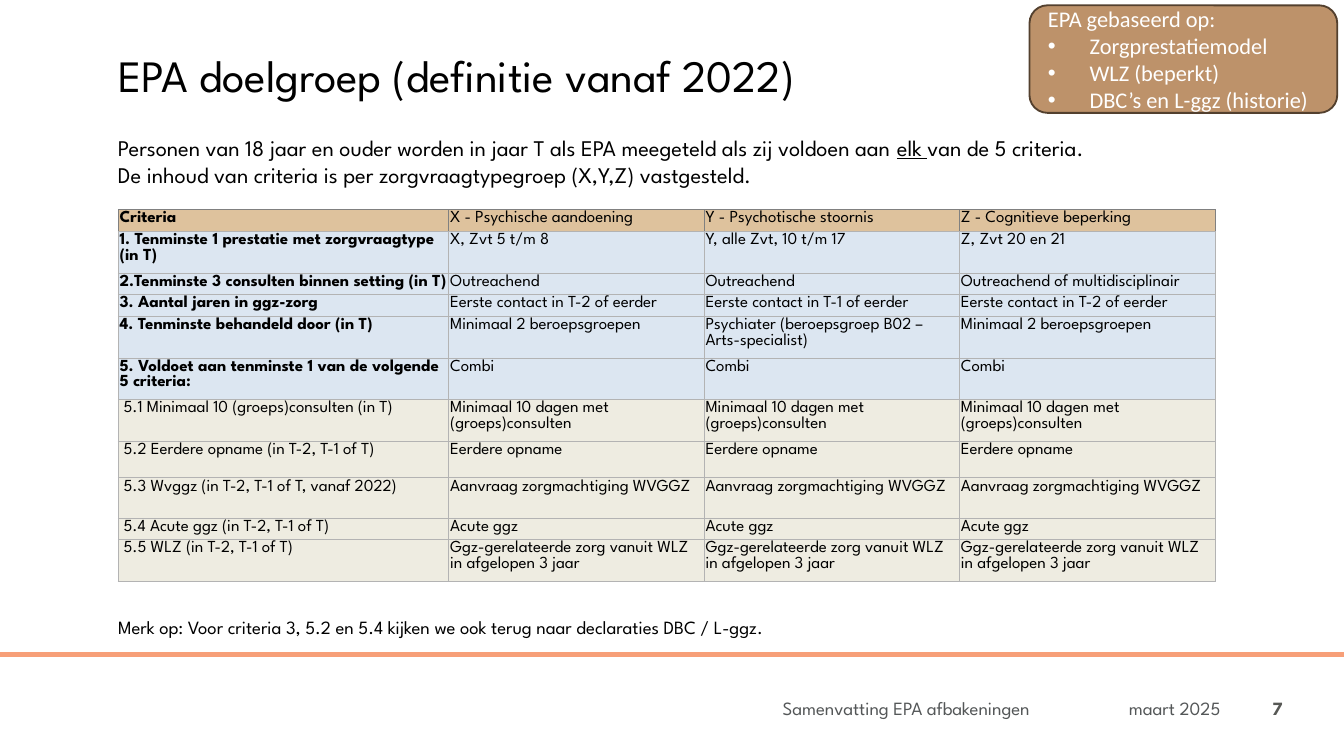
from lxml import etree
from pptx import Presentation, util as u
from pptx.dml.color import RGBColor
from pptx.enum import shapes, text
from pptx.oxml.ns import qn

FONT = "League Spartan"
HEX = {"black": "000000", "white": "FFFFFF", "grey": "545758", "page": "575855",
       "rule": "F79F78", "head": "DEC29D", "main": "DCE6F1", "sub": "EEECE1",
       "edge": "B3B3B3", "dark": "808080", "note": "BD926A", "rim": "53402E"}

# Content
TITLE = "EPA doelgroep (definitie vanaf 2022)"
INTRO = [["Personen van 18 jaar en ouder worden in jaar T als EPA meegeteld als zij voldoen aan ",
          "elk ", "van de 5 criteria."],
         ["De inhoud van criteria is per zorgvraagtypegroep (X,Y,Z) vastgesteld."]]
REMARK = "Merk op: Voor criteria 3, 5.2 en 5.4 kijken we ook terug naar declaraties DBC / L-ggz."
BASIS = ["EPA gebaseerd op:", "Zorgprestatiemodel", "WLZ (beperkt)", "DBC’s en L-ggz (historie)"]
FOOT = [("Samenvatting EPA afbakeningen", 3.72, 3.94, "grey"),
        ("maart 2025", 7.68, 1.4, "grey"), ("7", 9.06, 0.58, "page")]

# Row kind, least height, label, then X, Y and Z (a single value serves all three)
ROWS = [
    ("head", 0.14, "Criteria", "X - Psychische aandoening", "Y - Psychotische stoornis",
     "Z - Cognitieve beperking"),
    ("main", 0.14, "1. Tenminste 1 prestatie met zorgvraagtype (in T)", "X, Zvt 5 t/m 8",
     "Y, alle Zvt, 10 t/m 17", "Z, Zvt 20 en 21"),
    ("main", 0.14, "2.Tenminste 3 consulten binnen setting (in T)", "Outreachend",
     "Outreachend", "Outreachend of multidisciplinair"),
    ("main", 0.14, "3. Aantal jaren in ggz-zorg", "Eerste contact in T-2 of eerder",
     "Eerste contact in T-1 of eerder", "Eerste contact in T-2 of eerder"),
    ("main", 0.27, "4. Tenminste behandeld door (in T)", "Minimaal 2 beroepsgroepen",
     "Psychiater (beroepsgroep B02 – Arts-specialist)", "Minimaal 2 beroepsgroepen"),
    ("main", 0.27, "5. Voldoet aan tenminste 1 van de volgende 5 criteria:", "Combi"),
    ("sub", 0.27, "5.1 Minimaal 10 (groeps)consulten (in T)",
     "Minimaal 10 dagen met (groeps)consulten"),
    ("sub", 0.27, "5.2 Eerdere opname (in T-2, T-1 of T)", "Eerdere opname"),
    ("sub", 0.3, "5.3 Wvggz (in T-2, T-1 of T, vanaf 2022)", "Aanvraag zorgmachtiging WVGGZ"),
    ("sub", 0.14, "5.4 Acute ggz (in T-2, T-1 of T)", "Acute ggz"),
    ("sub", 0.27, "5.5 WLZ (in T-2, T-1 of T)",
     "Ggz-gerelateerde zorg vanuit WLZ in afgelopen 3 jaar"),
]
COLS = [2.46, 1.9, 1.9, 1.9]


def rgb(name):
    return RGBColor.from_string(HEX[name])


def box(x, y, w, h):
    return [u.Inches(v) for v in (x, y, w, h)]


def style(frame, size, color="black", face=FONT, bold=False):
    for para in frame.paragraphs:
        for run in para.runs:
            font = run.font
            font.size, font.name, font.bold = u.Pt(size), face, bold
            font.color.rgb = rgb(color)


def label(words, place):
    frame = slide.shapes.add_textbox(*box(*place)).text_frame
    frame.word_wrap = True
    frame.text = words
    return frame


def border(cell, kind):
    props = cell._tc.get_or_add_tcPr()
    for side in "LRTB":
        tone = "dark" if kind == "head" and side != "B" else "edge"
        line = etree.SubElement(props, qn(f"a:ln{side}"), w=str(u.Pt(0.5)))
        fill = etree.SubElement(line, qn("a:solidFill"))
        etree.SubElement(fill, qn("a:srgbClr"), val=HEX[tone])


# Widescreen page, 16 by 9
deck = Presentation()
deck.slide_width = u.Inches(10)
deck.slide_height = u.Inches(10 * 9 / 16)
slide = deck.slides.add_slide(deck.slide_layouts[5])

# Footer rule
rule = slide.shapes.add_connector(shapes.MSO_CONNECTOR.STRAIGHT, *box(0, 4.87, 10, 4.87))
rule.line.color.rgb = rgb("rule")
rule.line.width = u.Pt(2.75)
etree.SubElement(rule._element.spPr, qn("a:effectLst"))

# Title
title = slide.shapes.title
title.left, title.top, title.width, title.height = box(0.88, 0.4, 8.17, 0.57)
frame = title.text_frame
frame.text = TITLE
frame.margin_left = frame.margin_right = frame.margin_top = frame.margin_bottom = 0
frame.vertical_anchor = text.MSO_ANCHOR.TOP
frame.auto_size = text.MSO_AUTO_SIZE.NONE
frame.paragraphs[0].alignment = text.PP_ALIGN.LEFT
frame.paragraphs[0].line_spacing = 0.9
style(frame, 24)

# Footer
for words, x, w, color in FOOT:
    frame = label(words, (x, 5.15, w, 0.24))
    frame.vertical_anchor = text.MSO_ANCHOR.MIDDLE
    frame.margin_right = u.Inches(0.1 if color == "page" else 0)
    frame.paragraphs[0].alignment = text.PP_ALIGN.RIGHT
    style(frame, 10, color, bold=color == "page")

# Introduction
frame = label("", (0.78, 0.95, 8.93, 0.5))
for i, parts in enumerate(INTRO):
    para = frame.add_paragraph() if i else frame.paragraphs[0]
    for part in parts:
        run = para.add_run()
        run.text = part
        run.font.underline = part == "elk "
style(frame, 12)

# Criteria table
table = slide.shapes.add_table(len(ROWS), len(COLS), *box(0.88, 1.56, 8.15, 2.88)).table
for col, wide in zip(table.columns, COLS):
    col.width = u.Inches(wide)
for r, (kind, tall, name, *vals) in enumerate(ROWS):
    table.rows[r].height = u.Inches(tall)
    vals = vals * 3 if len(vals) == 1 else vals
    for c, words in enumerate([name] + vals):
        cell = table.cell(r, c)
        cell.text = words
        cell.margin_left = u.Inches(0.04 if kind == "sub" and c == 0 else 0.01)
        cell.margin_right = cell.margin_top = u.Inches(0.01)
        cell.margin_bottom = 0
        border(cell, kind)
        cell.fill.solid()
        cell.fill.fore_color.rgb = rgb(kind)
        style(cell.text_frame, 9, bold=c == 0 and kind != "sub")

# Basis note
note = slide.shapes.add_shape(shapes.MSO_SHAPE.ROUNDED_RECTANGLE, *box(7.66, 0.04, 2.29, 0.8))
note.shadow.inherit = False
note.fill.solid()
note.fill.fore_color.rgb = rgb("note")
note.line.color.rgb = rgb("rim")
note.line.width = u.Pt(1)
frame = note.text_frame
frame.text = "\n".join(BASIS)
frame.vertical_anchor = text.MSO_ANCHOR.MIDDLE
for i, para in enumerate(frame.paragraphs):
    para.alignment = text.PP_ALIGN.LEFT
    if i:
        props = para._p.get_or_add_pPr()
        props.set("marL", str(u.Inches(0.31)))
        props.set("indent", str(-u.Inches(0.31)))
        etree.SubElement(props, qn("a:buFont"), typeface="Arial")
        etree.SubElement(props, qn("a:buChar"), char="•")
style(frame, 12, "white", "Calibri")

# Remark
style(label(REMARK, (0.78, 4.53, 5.95, 0.27)), 10)

deck.save("out.pptx")
